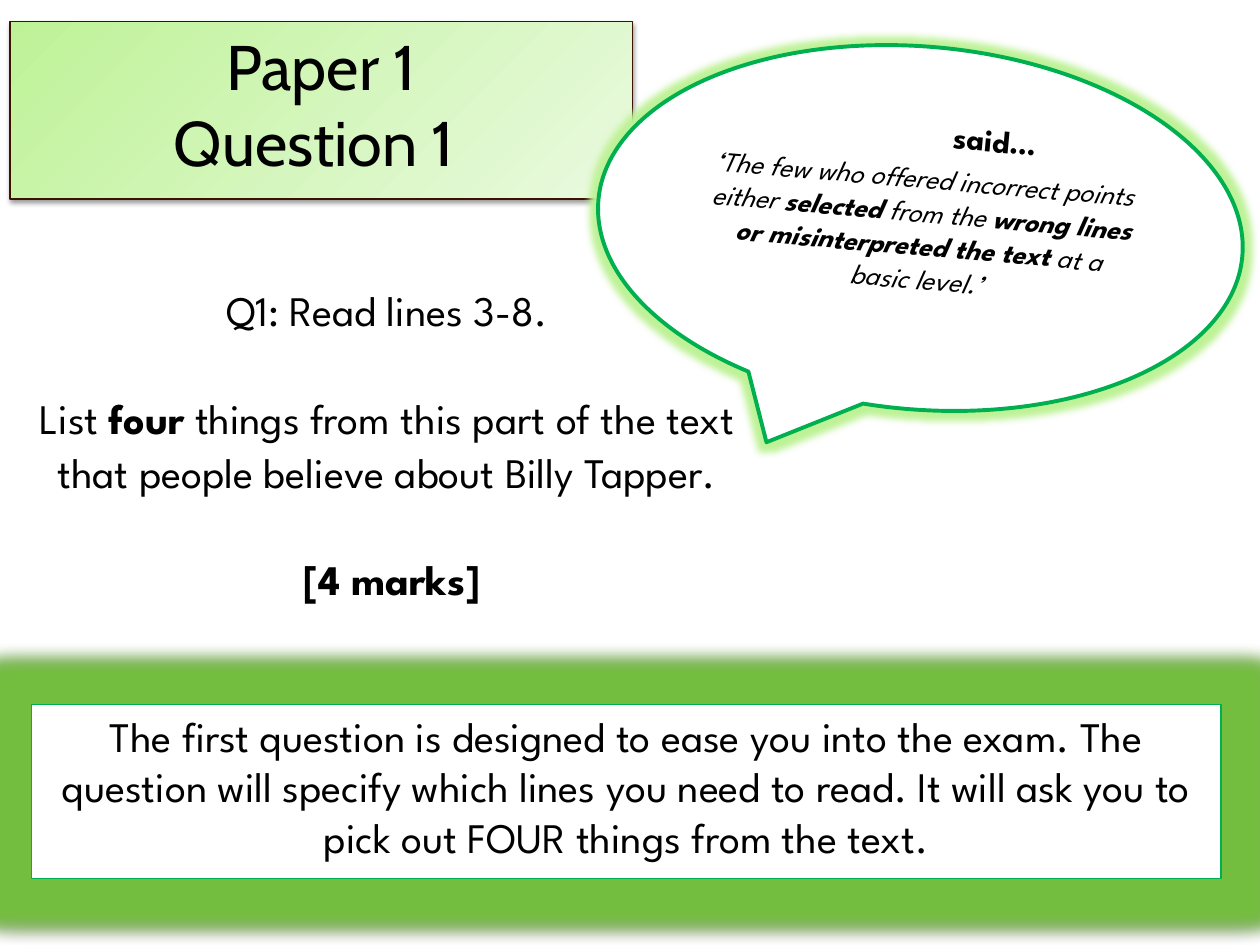
from dataclasses import dataclass
from typing import Optional

import lxml.etree
import pptx
import pptx.dml.color
import pptx.enum.dml
import pptx.enum.shapes
import pptx.enum.text
import pptx.oxml.ns
import pptx.util

RGB = pptx.dml.color.RGBColor
Pt = pptx.util.Pt
Anchor = pptx.enum.text.MSO_ANCHOR
Preset = pptx.enum.shapes.MSO_SHAPE

BLACK = RGB(0x00, 0x00, 0x00)
WHITE = RGB(0xFF, 0xFF, 0xFF)
GREEN = RGB(0x00, 0xB0, 0x50)
LEAF = RGB(0x74, 0xBE, 0x3F)
LIME = RGB(0xBE, 0xF2, 0x97)
PALE_LIME = RGB(0xEA, 0xFA, 0xE0)
BROWN = RGB(0x3C, 0x13, 0x01)

COLUMNS, ROWS = 100, 75
TITLE_FONT = "Cabin"
BODY_FONT = "League Spartan"
BOLD_MARK = "*"


@dataclass(frozen=True)
class Region:
    column: float
    row: float
    columns: float
    rows: float


@dataclass(frozen=True)
class TextStyle:
    size: float
    font: str = BODY_FONT
    bold: Optional[bool] = None
    italic: bool = False
    line_spacing: Optional[float] = None
    gap: float = 0


@dataclass(frozen=True)
class Glow:
    color: RGB
    radius: float


@dataclass(frozen=True)
class Panel:
    region: Region
    text: str
    style: TextStyle
    preset: Preset = Preset.RECTANGLE
    line: RGB = GREEN
    line_width: float = 0.75
    rotation: float = 0
    anchor: Anchor = Anchor.MIDDLE
    glow: Optional[Glow] = None
    shadow: bool = False


PANELS = [
    Panel(
        Region(2.5, 55.9, 94.4, 13.8),
        "The first question is designed to ease you into the exam. The question "
        "will specify which lines you need to read. It will ask you to pick out "
        "FOUR things from the text.",
        TextStyle(24), anchor=Anchor.TOP, glow=Glow(LEAF, 18), shadow=True,
    ),
    Panel(
        Region(47.4, 3.7, 51.3, 28.8),
        "‘The few who offered incorrect points either *selected* from the "
        "*wrong lines or misinterpreted the text* at a basic level.’",
        TextStyle(16, italic=True), Preset.OVAL_CALLOUT,
        line_width=2.25, rotation=5, glow=Glow(LIME, 8),
    ),
    Panel(
        Region(73.2, 8.6, 11.5, 5), "said…", TextStyle(18, bold=True),
        line=WHITE, line_width=1, rotation=5.2,
    ),
]
TASK = [
    "Q1: Read lines 3-8.",
    "List *four* things from this part of the text that people believe about Billy Tapper.",
    " *[4 marks]*",
]


def place(shape, region: Region, prs) -> None:
    cell_width, cell_height = prs.slide_width / COLUMNS, prs.slide_height / ROWS
    shape.left = round(region.column * cell_width)
    shape.top = round(region.row * cell_height)
    shape.width = round(region.columns * cell_width)
    shape.height = round(region.rows * cell_height)


def write(shape, paragraphs: list[str], style: TextStyle, anchor: Anchor) -> None:
    frame = shape.text_frame
    frame.word_wrap = True
    frame.auto_size = pptx.enum.text.MSO_AUTO_SIZE.NONE
    frame.vertical_anchor = anchor
    for index, text in enumerate(paragraphs):
        paragraph = frame.add_paragraph() if index else frame.paragraphs[0]
        paragraph.alignment = pptx.enum.text.PP_ALIGN.CENTER
        paragraph.line_spacing = style.line_spacing
        if index and style.gap:
            paragraph.space_before = Pt(style.gap)
        font = paragraph.font
        font.name, font.size = style.font, Pt(style.size)
        font.bold, font.italic = style.bold, style.italic
        font.color.rgb = BLACK
        for part, words in enumerate(text.split(BOLD_MARK)):
            if words:
                run = paragraph.add_run()
                run.text = words
                if part % 2:
                    run.font.bold = True


def add_effect(shape, kind: str, color: RGB, opacity: int, **lengths: int) -> None:
    qn = pptx.oxml.ns.qn
    effects = shape._element.spPr.find(qn("a:effectLst"))
    effect = lxml.etree.SubElement(
        effects, qn(kind), {name: str(value) for name, value in lengths.items()}
    )
    tint = lxml.etree.SubElement(effect, qn("a:srgbClr"), val=str(color))
    lxml.etree.SubElement(tint, qn("a:alpha"), val=str(opacity * 1000))


def decorate(shape, line: RGB, width: float, glow: Optional[Glow], shadow: bool) -> None:
    shape.line.color.rgb = line
    shape.line.width = Pt(width)
    shape.shadow.inherit = False
    if glow:
        add_effect(shape, "a:glow", glow.color, 100, rad=Pt(glow.radius))
    if shadow:
        add_effect(shape, "a:outerShdw", BLACK, 38,
                   blurRad=Pt(3.1), dist=Pt(1.6), dir=90 * 60000)


def add_title(slide, prs) -> None:
    title = slide.shapes.title
    place(title, Region(0.8, 1.7, 49.4, 14.1), prs)
    title.fill.gradient()
    title.fill.gradient_angle = 315
    for stop, color in zip(title.fill.gradient_stops, (LIME, PALE_LIME)):
        stop.color.rgb = color
    decorate(title, BROWN, 0.75, None, True)
    write(title, ["Paper 1", "Question 1 "], TextStyle(36, TITLE_FONT), Anchor.TOP)


def add_panel(slide, prs, panel: Panel) -> None:
    shape = slide.shapes.add_shape(panel.preset, 0, 0, 0, 0)
    place(shape, panel.region, prs)
    shape.rotation = panel.rotation
    shape.fill.solid()
    shape.fill.fore_color.rgb = WHITE
    decorate(shape, panel.line, panel.line_width, panel.glow, panel.shadow)
    write(shape, [panel.text], panel.style, panel.anchor)


def add_task(slide, prs) -> None:
    task = slide.shapes.add_textbox(0, 0, 0, 0)
    place(task, Region(1.8, 21.8, 57.8, 31.3), prs)
    write(task, TASK, TextStyle(24, line_spacing=1.07, gap=30.8), Anchor.TOP)


def main() -> None:
    prs = pptx.Presentation()
    prs.slide_width, prs.slide_height = pptx.util.Inches(10), pptx.util.Inches(7.5)
    slide = prs.slides.add_slide(prs.slide_layouts.get_by_name("Title Only"))
    add_title(slide, prs)
    for panel in PANELS:
        add_panel(slide, prs, panel)
    add_task(slide, prs)
    prs.save("out.pptx")


if __name__ == "__main__":
    main()
